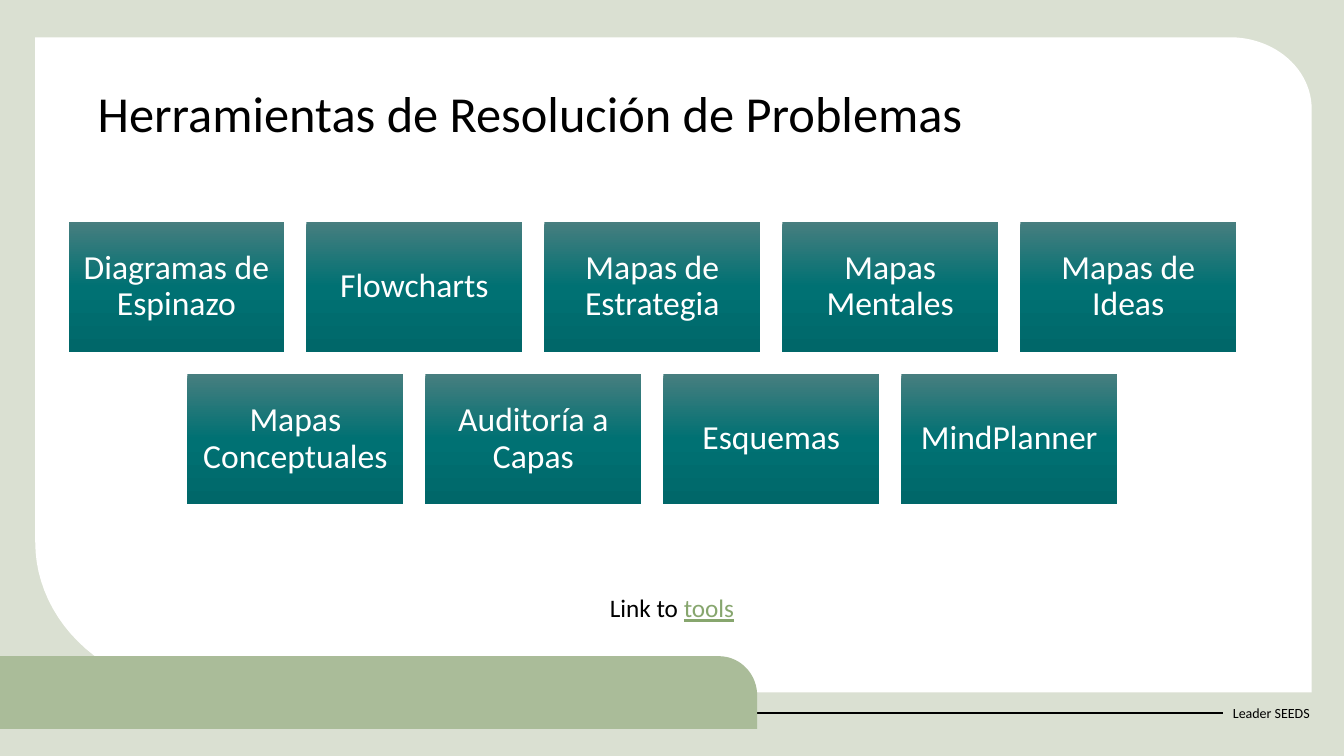
"""Builds a slide that lists problem solving tools as two centred rows of tiles."""
import copy
import math

import lxml.etree
import pptx
import pptx.util
import pptx.dml.color
import pptx.enum.shapes
import pptx.enum.text
import pptx.oxml.ns

Inches = pptx.util.Inches
Kind = pptx.enum.shapes.MSO_SHAPE
Align = pptx.enum.text.PP_ALIGN
Anchor = pptx.enum.text.MSO_ANCHOR
qn = pptx.oxml.ns.qn

TITLE = "Herramientas de Resolución de Problemas"
ROWS = [
    ["Diagramas de Espinazo", "Flowcharts", "Mapas de Estrategia",
     "Mapas Mentales", "Mapas de Ideas"],
    ["Mapas Conceptuales", "Auditoría a Capas", "Esquemas", "MindPlanner"],
]
LINK = ["Link to ", "tools"]
FOOTER = "Leader SEEDS"

THEME = {
    "font": "Calibri", "ink": "000000", "paper": "FFFFFF", "frame": "DAE0D2",
    "band": "AABC99", "link": "87A66E",
    "tile": [(0, "477E7F"), (0.5, "007173"), (1, "006769")],
    "title": 36, "label": 24, "body": 18, "small": 10,
}
WIDE, HIGH = 13.33, 7.5
TILE_W, TILE_H, GAP = 2.14, 1.29, 0.22
MIDDLE, TOP = 6.47, 2.2


def color(code):
    return pptx.dml.color.RGBColor.from_string(code)


def write(frame, parts, size, tint=THEME["ink"], align=Align.LEFT,
          anchor=Anchor.TOP, space=1.0, pad=0.05, wrap=True):
    """Puts runs of (text, tint, underline) or plain text into a frame."""
    frame.word_wrap = wrap
    frame.vertical_anchor = anchor
    frame.margin_left = frame.margin_right = Inches(0.1)
    frame.margin_top = frame.margin_bottom = Inches(pad)
    line = frame.paragraphs[0]
    line.alignment, line.line_spacing = align, space
    if isinstance(parts, str):
        parts = [(parts, tint, False)]
    for text, hue, under in parts:
        run = line.add_run()
        run.text = text
        run.font.name = THEME["font"]
        run.font.size = pptx.util.Pt(size)
        run.font.color.rgb = color(hue)
        if under:
            run.font.underline = True


def add_text(slide, spot, parts, size, **form):
    box = slide.shapes.add_textbox(*map(Inches, spot))
    write(box.text_frame, parts, size, **form)


def finish(shape, code):
    shape.shadow.inherit = False
    shape.line.fill.background()
    shape.fill.solid()
    shape.fill.fore_color.rgb = color(code)


def arc(x, y, wide, high, start):
    """Gives the points of a clockwise quarter turn round a centre."""
    turns = [math.radians(start + 90 * step / 24) for step in range(25)]
    return [(x + wide * math.cos(t), y + high * math.sin(t)) for t in turns]


def add_form(slide, points, code):
    dots = [(Inches(x), Inches(y)) for x, y in points]
    form = slide.shapes.build_freeform(*dots[0], scale=1.0)
    form.add_line_segments(dots[1:], close=True)
    finish(form.convert_to_shape(), code)


def add_tile(slide, x, y, label):
    tile = slide.shapes.add_shape(
        Kind.RECTANGLE, *map(Inches, (x, y, TILE_W, TILE_H)))
    tile.shadow.inherit = False
    tile.line.fill.background()
    tile.fill.gradient()
    tile.fill.gradient_angle = 270
    stops = tile._element.spPr.find(".//" + qn("a:gsLst"))
    stops.insert(1, copy.deepcopy(stops[0]))
    for stop, (place, code) in zip(tile.fill.gradient_stops, THEME["tile"]):
        stop.position = place
        stop.color.rgb = color(code)
    write(tile.text_frame, label, THEME["label"], tint=THEME["paper"],
          align=Align.CENTER, anchor=Anchor.MIDDLE, space=0.9, pad=0.1)


def add_rule(slide, left, right, y):
    rule = slide.shapes.add_connector(
        pptx.enum.shapes.MSO_CONNECTOR.STRAIGHT,
        *map(Inches, (left, y, right, y)))
    rule.line.color.rgb = color(THEME["ink"])
    rule.line.width = pptx.util.Pt(1.5)
    lxml.etree.SubElement(rule._element.spPr, qn("a:effectLst"))


def main():
    deck = pptx.Presentation()
    deck.slide_width, deck.slide_height = Inches(WIDE), Inches(HIGH)
    slide = deck.slides.add_slide(deck.slide_layouts[6])

    back = slide.background.fill
    back.solid()
    back.fore_color.rgb = color(THEME["frame"])

    panel = [(0.35, 0.37), *arc(12.2, 1.08, 0.81, 0.71, 270),
             (13.01, 6.87), *arc(2.05, 5.38, 1.7, 1.49, 90)]
    add_form(slide, panel, THEME["paper"])
    add_text(slide, (12.13, 6.87, 1.01, 0.4), FOOTER, THEME["small"],
             anchor=Anchor.MIDDLE, wrap=False)
    add_rule(slide, 0, 12.13, 7.07)
    band = [(0, 6.51), *arc(7.13, 6.9, 0.38, 0.39, 270),
            (7.51, 7.23), (0, 7.23)]
    add_form(slide, band, THEME["band"])

    add_text(slide, (0.87, 0.83, 11.59, 0.88), TITLE, THEME["title"],
             space=0.9)

    for row, labels in enumerate(ROWS):
        span = len(labels) * (TILE_W + GAP) - GAP
        for col, label in enumerate(labels):
            add_tile(slide, MIDDLE - span / 2 + col * (TILE_W + GAP),
                     TOP + row * (TILE_H + GAP), label)

    parts = [(LINK[0], THEME["ink"], False), (LINK[1], THEME["link"], True)]
    add_text(slide, (3.33, 5.77, 6.67, 0.44), parts, THEME["body"],
             align=Align.CENTER, space=1.2)

    deck.save("out.pptx")


if __name__ == "__main__":
    main()
